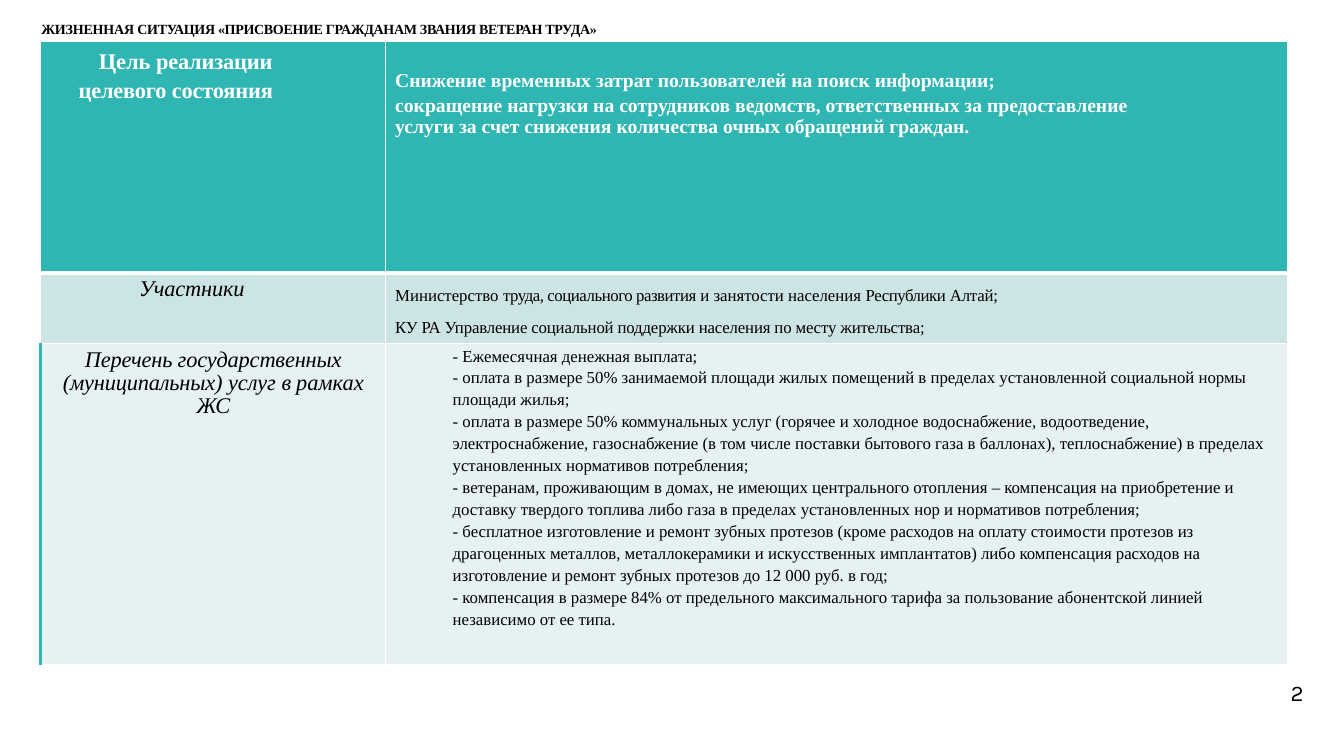
from lxml import etree
from pptx import Presentation
from pptx.dml.color import RGBColor
from pptx.enum.text import MSO_ANCHOR, MSO_AUTO_SIZE, PP_ALIGN
from pptx.oxml.ns import qn
from pptx.util import Inches, Pt

TOP = MSO_ANCHOR.TOP
NO_FIT = MSO_AUTO_SIZE.NONE
LEFT, CENTER = PP_ALIGN.LEFT, PP_ALIGN.CENTER
SERIF, SANS = "Times New Roman", "Karla"
COLORS = {"teal": "2FB5B2", "mid": "CCE4E3", "pale": "E6F1F1",
          "white": "FFFFFF", "black": "000000"}

TITLE = [[("ЖИЗНЕННАЯ ", -0.1),
          ("СИТУАЦИЯ «ПРИСВОЕНИЕ ГРАЖДАНАМ ЗВАНИЯ ВЕТЕРАН ТРУДА»", -0.2)]]
GOAL = [[("Цель ", 0), ("реализации целевого состояния", -0.1)]]
AIMS = [
    [("Снижение временных затрат пользователей на поиск информации;", 0)],
    [("сокращение нагрузки на сотрудников ведомств, ответственных за "
      "предоставление услуги за счет снижения количества очных обращений "
      "граждан.", 0)],
]
PARTIES = [
    [("Министерство ", 0), ("труда, социального развития ", -0.3),
     ("и занятости населения ", 0), ("Республики ", -0.3), ("Алтай;", -0.1)],
    [("КУ РА Управление социальной поддержки населения по месту жительства;",
      -0.1)],
]
LIST_HEAD = [[("Перечень государственных (муниципальных) ", -0.1),
              ("услуг ", 0), ("в ", -0.5), ("рамках ", 0), ("ЖС", -0.2)]]
SERVICES = [[(text, 0)] for text in (
    "- Ежемесячная денежная выплата;",
    "- оплата в размере 50% занимаемой площади жилых помещений в пределах "
    "установленной социальной нормы площади жилья;",
    "- оплата в размере 50% коммунальных услуг (горячее и холодное "
    "водоснабжение, водоотведение, электроснабжение, газоснабжение (в том "
    "числе поставки бытового газа в баллонах), теплоснабжение) в пределах "
    "установленных нормативов потребления;",
    "- ветеранам, проживающим в домах, не имеющих центрального отопления – "
    "компенсация на приобретение и доставку твердого топлива либо газа в "
    "пределах установленных нор и нормативов потребления;",
    "- бесплатное изготовление и ремонт зубных протезов (кроме расходов на "
    "оплату стоимости протезов из драгоценных металлов, металлокерамики и "
    "искусственных имплантатов) либо компенсация расходов на изготовление и "
    "ремонт зубных протезов до 12 000 руб. в год;",
    "- компенсация в размере 84% от предельного максимального тарифа за "
    "пользование абонентской линией независимо от ее типа.",
)]


def write(frame, paras, size, color="black", font=SERIF, bold=False,
          italic=False, align=LEFT, left=0, first=0, right=0, line=1.0,
          gap=0):
    """Fill a text frame with paragraphs of (text, letter spacing) runs."""
    frame.word_wrap = True
    for idx, runs in enumerate(paras):
        para = frame.add_paragraph() if idx else frame.paragraphs[0]
        para.alignment = align
        para.line_spacing = line
        para.space_before = Pt(gap if idx else 0)
        props = para._p.get_or_add_pPr()
        for name, value in (("marL", left), ("indent", first), ("marR", right)):
            props.set(name, str(Inches(value)))
        for text, track in runs:
            run = para.add_run()
            run.text = text
            run.font.name = font
            run.font.size = Pt(size)
            run.font.bold = bold
            run.font.italic = italic
            run.font.color.rgb = RGBColor.from_string(COLORS[color])
            run._r.get_or_add_rPr().set("spc", str(round(track * 100)))


def place(shape, left, top, width, height, inset=0):
    """Set the position and the insets of a text shape."""
    shape.left, shape.top = Inches(left), Inches(top)
    shape.width, shape.height = Inches(width), Inches(height)
    frame = shape.text_frame
    frame.margin_left = frame.margin_right = frame.margin_bottom = 0
    frame.margin_top = Inches(inset)
    frame.vertical_anchor = TOP
    frame.auto_size = NO_FIT
    return frame


def edge(cell, sides):
    """Draw the four borders of a cell, given as {side: (color, points)}."""
    props = cell._tc.get_or_add_tcPr()
    for idx, side in enumerate("LRTB"):
        color, width = sides.get(side, ("white", 1))
        line = etree.Element(qn("a:ln" + side), w=str(Pt(width)))
        fill = etree.SubElement(line, qn("a:solidFill"))
        etree.SubElement(fill, qn("a:srgbClr"), val=COLORS[color])
        props.insert(idx, line)


def fill_cell(cell, fill, inset, paras, sides, **style):
    """Colour, border and write one table cell."""
    cell.fill.solid()
    cell.fill.fore_color.rgb = RGBColor.from_string(COLORS[fill])
    cell.margin_left = cell.margin_right = cell.margin_bottom = 0
    cell.margin_top = Inches(inset)
    cell.vertical_anchor = TOP
    edge(cell, sides)
    write(cell.text_frame, paras, **style)


def add_grid(slide):
    """Add the table of aims, parties and services."""
    grid = slide.shapes.add_table(3, 2, Inches(0.4), Inches(0.41),
                                  Inches(12.37), Inches(6.18)).table
    for col, width in zip(grid.columns, (3.42, 8.95)):
        col.width = Inches(width)
    for row, height in zip(grid.rows, (2.3, 0.7, 3.18)):
        row.height = Inches(height)
    head, mid = {"B": ("white", 3)}, {"T": ("white", 3)}
    fill_cell(grid.cell(0, 0), "teal", 0.05, GOAL, head, size=16,
              color="white", bold=True, left=0.38, first=0.2, right=1,
              line=Pt(20.2))
    fill_cell(grid.cell(0, 1), "teal", 0.3, AIMS, head, size=14,
              color="white", bold=True, left=0.1, right=1.2, line=0.94,
              gap=3.2)
    fill_cell(grid.cell(1, 0), "mid", 0.03, [[("Участники", -0.1)]], mid,
              size=16, italic=True, left=0.98)
    fill_cell(grid.cell(1, 1), "mid", 0.03, PARTIES, mid, size=12, left=0.1,
              line=Pt(20.9), gap=1.9)
    fill_cell(grid.cell(2, 0), "pale", 0.05, LIST_HEAD, {"L": ("teal", 2.25)},
              size=16, italic=True, align=CENTER, left=0.2, right=0.19,
              line=0.93)
    fill_cell(grid.cell(2, 1), "pale", 0, SERVICES, {}, size=12, left=0.67,
              line=Pt(15.7))


def main():
    """Build the slide and save it."""
    deck = Presentation()
    deck.slide_width, deck.slide_height = Inches(13.33), Inches(7.5)
    slide = deck.slides.add_slide(deck.slide_layouts[5])
    title = place(slide.shapes.title, 0.4, 0.19, 6.36, 0.18, 0.01)
    write(title, TITLE, 10, bold=True, left=0.01)
    add_grid(slide)
    box = slide.shapes.add_textbox(0, 0, 0, 0)
    number = place(box, 12.76, 6.75, 0.22, 0.28)
    write(number, [[("2", -0.5)]], 16, font=SANS, left=0.04, line=Pt(18.6))
    deck.save("out.pptx")


if __name__ == "__main__":
    main()
